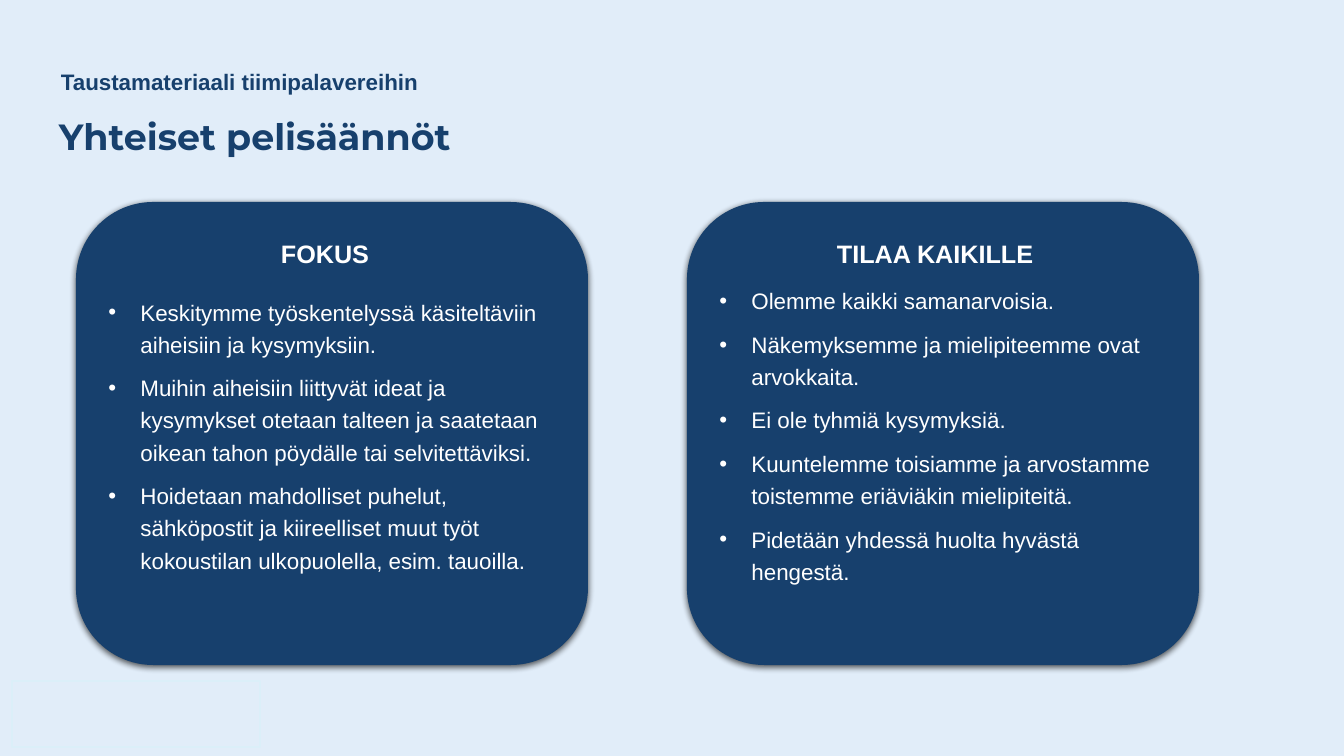
from lxml import etree
from pptx import Presentation
from pptx import util as u
from pptx.dml.color import RGBColor
from pptx.enum import shapes, text
from pptx.oxml import ns

NAVY = RGBColor(0x17, 0x40, 0x6D)
WHITE = RGBColor(0xFF, 0xFF, 0xFF)
PALE = RGBColor(0xE1, 0xED, 0xF9)
PALE_EDGE = RGBColor(0xDB, 0xEF, 0xF9)

CARD_TOP, CARD_WIDTH, CARD_HEIGHT = 202, 512, 463
HEADING_TOP, HEADING_HEIGHT = 233, 40
INDENT = 32

# card left, heading left, heading width, heading, rules
CARDS = [
    (76, 271, 183, "FOKUS", [
        "Keskitymme työskentelyssä käsiteltäviin aiheisiin ja kysymyksiin.",
        "Muihin aiheisiin liittyvät ideat ja kysymykset otetaan talteen ja "
        "saatetaan oikean tahon pöydälle tai selvitettäviksi.",
        "Hoidetaan mahdolliset puhelut, sähköpostit ja kiireelliset muut työt "
        "kokoustilan ulkopuolella, esim. tauoilla.",
    ]),
    (687, 827, 253, "TILAA KAIKILLE", [
        "Olemme kaikki samanarvoisia.",
        "Näkemyksemme ja mielipiteemme ovat arvokkaita.",
        "Ei ole tyhmiä kysymyksiä.",
        "Kuuntelemme toisiamme ja arvostamme toistemme eriäviäkin mielipiteitä.",
        "Pidetään yhdessä huolta hyvästä hengestä.",
    ]),
]


def px(length):
    return u.Emu(round(length * 914400 / 100.8))


def add_element(parent, tag, **attributes):
    return etree.SubElement(parent, ns.qn(tag), attributes)


class Canvas:
    """Holds the slide and the text style shared by its elements."""

    def __init__(self, slide, font="Arial", size=16):
        self.slide, self.font, self.size = slide, font, size

    def style(self, paragraph, color, size=None, bold=False, font=None):
        paragraph.font.name = font or self.font
        paragraph.font.size = u.Pt(size or self.size)
        paragraph.font.bold = bold
        paragraph.font.color.rgb = color

    def label(self, box, words, color, anchor=text.MSO_ANCHOR.TOP,
              wrap=True, spacing=1.0, **font):
        frame = self.slide.shapes.add_textbox(*map(px, box)).text_frame
        frame.word_wrap = wrap
        frame.vertical_anchor = anchor
        paragraph = frame.paragraphs[0]
        paragraph.text = words
        paragraph.line_spacing = spacing
        self.style(paragraph, color, bold=True, **font)
        return frame

    def block(self, kind, box, fill, line=None):
        shape = self.slide.shapes.add_shape(kind, *map(px, box))
        shape.shadow.inherit = False
        shape.fill.solid()
        shape.fill.fore_color.rgb = fill
        if line is None:
            shape.line.fill.background()
        else:
            shape.line.color.rgb = line
            shape.line.width = u.Pt(1)
        return shape

    def drop_shadow(self, shape):
        effects = shape._element.spPr.find(ns.qn("a:effectLst"))
        shadow = add_element(effects, "a:outerShdw", blurRad=str(u.Pt(4.5)),
                             dist=str(u.Pt(1.5)), dir="5400000",
                             algn="ctr", rotWithShape="0")
        color = add_element(shadow, "a:srgbClr", val="000000")
        add_element(color, "a:alpha", val="63000")

    def bullets(self, shape, rules):
        frame = shape.text_frame
        frame.word_wrap = True
        frame.vertical_anchor = text.MSO_ANCHOR.MIDDLE
        for index, rule in enumerate(rules):
            paragraph = frame.add_paragraph() if index else frame.paragraphs[0]
            paragraph.text = rule
            paragraph.alignment = text.PP_ALIGN.LEFT
            paragraph.line_spacing = 1.2
            paragraph.space_before = u.Pt(8 if index else 0)
            properties = paragraph._p.get_or_add_pPr()
            properties.set("marL", str(px(INDENT)))
            properties.set("indent", str(-px(INDENT)))
            add_element(properties, "a:buFont", typeface="Arial")
            add_element(properties, "a:buChar", char="•")
            self.style(paragraph, WHITE)


def main():
    presentation = Presentation()
    presentation.slide_width, presentation.slide_height = px(1344), px(756)
    slide = presentation.slides.add_slide(presentation.slide_layouts[6])
    slide.background.fill.solid()
    slide.background.fill.fore_color.rgb = PALE
    canvas = Canvas(slide)

    canvas.label((49, 91, 1245, 96), "Yhteiset pelisäännöt", NAVY,
                 anchor=text.MSO_ANCHOR.MIDDLE, spacing=0.9,
                 size=26, font="Montserrat")
    subtitle = canvas.label((51, 68, 382, 27), "Taustamateriaali tiimipalavereihin",
                            NAVY, anchor=text.MSO_ANCHOR.MIDDLE, wrap=False)
    subtitle.margin_top = subtitle.margin_bottom = 0

    for left, heading_left, heading_width, heading, rules in CARDS:
        card = canvas.block(shapes.MSO_SHAPE.ROUNDED_RECTANGLE,
                            (left, CARD_TOP, CARD_WIDTH, CARD_HEIGHT), NAVY)
        canvas.drop_shadow(card)
        canvas.bullets(card, rules)
        canvas.label((heading_left, HEADING_TOP, heading_width, HEADING_HEIGHT),
                     heading, WHITE, size=18)

    canvas.block(shapes.MSO_SHAPE.RECTANGLE, (12, 681, 248, 66), PALE, PALE_EDGE)
    presentation.save("out.pptx")


if __name__ == "__main__":
    main()
